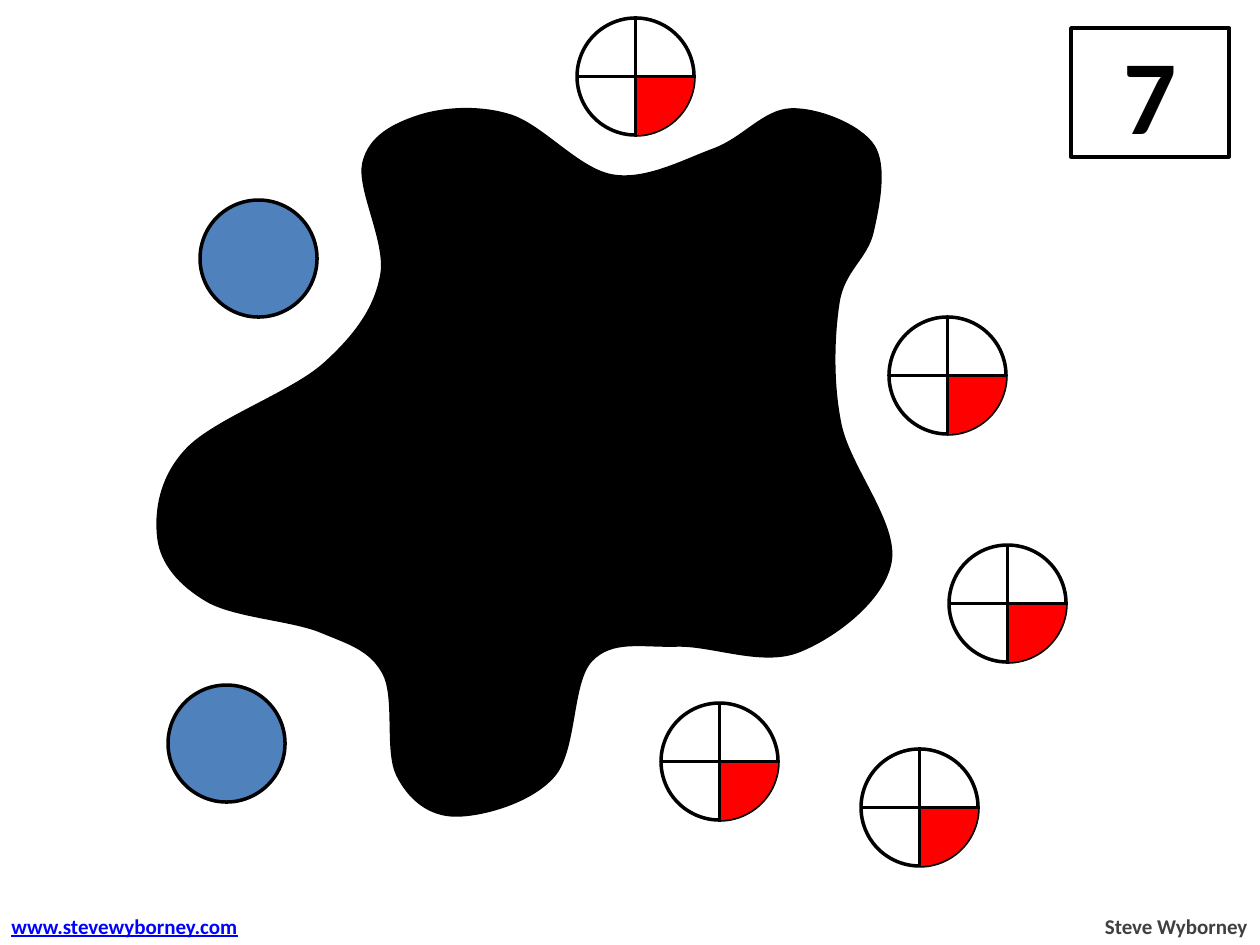
from lxml.etree import SubElement
from pptx import Presentation
from pptx.dml.color import RGBColor
from pptx.enum.shapes import MSO_CONNECTOR, MSO_SHAPE
from pptx.enum.text import MSO_ANCHOR, PP_ALIGN
from pptx.oxml.ns import qn
from pptx.util import Pt

COLORS = {"ink": "000000", "paper": "FFFFFF", "whole": "4F81BD",
          "quarter": "FF0000", "author": "404040", "link": "0000FF"}
TOTAL = ("7", (1071, 28, 158, 129))
AUTHOR = ("Steve Wyborney", (1091, 907, 169, 38))
WEBSITE = ("www.stevewyborney.com", (-1, 907, 258, 38))
WHOLES = [(200, 200), (168, 685)]
QUARTERS = [(577, 18), (949, 545), (861, 749), (889, 317), (661, 703)]
SPLAT_KNOTS = [
    (207, 600), (159, 538), (188, 449), (325, 364), (382, 275), (364, 163),
    (418, 117), (510, 116), (612, 176), (714, 150), (791, 110), (873, 146),
    (872, 232), (838, 302), (840, 425), (890, 562), (798, 651), (677, 645),
    (591, 660), (553, 776), (456, 815), (398, 775), (384, 673), (321, 631),
]

PX = 914400 / 126
SLIDE_SIZE = (1260, 945)
DIAMETER = 117
QUARTER_TURN = (0, 54.36)
LINE_WIDTH = Pt(2)
POINTS_PER_CURVE = 3


def emu(*lengths):
    return [round(length * PX) for length in lengths]


def color(name):
    return RGBColor.from_string(COLORS[name])


def outline(line):
    line.color.rgb = color("ink")
    line.width = LINE_WIDTH


def paint(shape, fill, outlined=True):
    shape.shadow.inherit = False
    shape.fill.solid()
    shape.fill.fore_color.rgb = color(fill)
    if outlined:
        outline(shape.line)
    else:
        shape.line.fill.background()
    return shape


def write(box, text, *, size=12, ink="ink", align=PP_ALIGN.LEFT,
          anchor=MSO_ANCHOR.TOP, underline=False):
    frame = box.text_frame
    frame.word_wrap = False
    frame.vertical_anchor = anchor
    paragraph = frame.paragraphs[0]
    paragraph.alignment = align
    run = paragraph.add_run()
    run.text = text
    font = run.font
    font.name, font.size, font.bold = "Calibri", Pt(size), True
    font.underline = underline
    font.color.rgb = color(ink)


def add_round(shapes, preset, corner, fill, outlined=True):
    box = emu(*corner, DIAMETER, DIAMETER)
    return paint(shapes.add_shape(preset, *box), fill, outlined)


def add_divider(shapes, *ends):
    divider = shapes.add_connector(MSO_CONNECTOR.STRAIGHT, *emu(*ends))
    outline(divider.line)
    SubElement(divider._element.spPr, qn("a:effectLst"))


def add_quarter(shapes, corner):
    wheel = shapes.add_group_shape().shapes
    add_round(wheel, MSO_SHAPE.OVAL, corner, "paper")
    wedge = add_round(wheel, MSO_SHAPE.PIE, corner, "quarter", outlined=False)
    for index, angle in enumerate(QUARTER_TURN):
        wedge.adjustments[index] = angle
    left, top = corner
    right, bottom = left + DIAMETER, top + DIAMETER
    center_x, center_y = (left + right) / 2, (top + bottom) / 2
    add_divider(wheel, center_x, top, center_x, bottom)
    add_divider(wheel, left, center_y, right, center_y)


def smooth_loop(knots):
    count = len(knots)
    tangents = [
        tuple((after - before) / 6 for before, after
              in zip(knots[index - 1], knots[(index + 1) % count]))
        for index in range(count)
    ]
    points = []
    for index, (x, y) in enumerate(knots):
        following = (index + 1) % count
        end_x, end_y = knots[following]
        leave_x, leave_y = tangents[index]
        arrive_x, arrive_y = tangents[following]
        points += [(x + leave_x, y + leave_y),
                   (end_x - arrive_x, end_y - arrive_y),
                   (end_x, end_y)]
    return points


def bend_segments(shape):
    segments = list(shape._element.iter(qn("a:lnTo")))
    for first in range(0, len(segments), POINTS_PER_CURVE):
        trio = segments[first:first + POINTS_PER_CURVE]
        curve = trio[0].makeelement(qn("a:cubicBezTo"))
        trio[0].addprevious(curve)
        for segment in trio:
            curve.extend(list(segment))
            segment.getparent().remove(segment)


def add_splat(shapes):
    builder = shapes.build_freeform(*SPLAT_KNOTS[0], scale=PX)
    builder.add_line_segments(smooth_loop(SPLAT_KNOTS))
    splat = paint(builder.convert_to_shape(), "ink")
    bend_segments(splat)


def main():
    deck = Presentation()
    deck.slide_width, deck.slide_height = emu(*SLIDE_SIZE)
    shapes = deck.slides.add_slide(deck.slide_layouts[6]).shapes

    total, total_box = TOTAL
    card = paint(shapes.add_shape(MSO_SHAPE.RECTANGLE, *emu(*total_box)), "paper")
    write(card, total, size=60, align=PP_ALIGN.CENTER, anchor=MSO_ANCHOR.MIDDLE)
    author, author_box = AUTHOR
    write(shapes.add_textbox(*emu(*author_box)), author, ink="author",
          align=PP_ALIGN.RIGHT)
    website, website_box = WEBSITE
    write(shapes.add_textbox(*emu(*website_box)), website, ink="link",
          underline=True)

    for corner in WHOLES:
        add_round(shapes, MSO_SHAPE.OVAL, corner, "whole")
    for corner in QUARTERS:
        add_quarter(shapes, corner)
    add_splat(shapes)
    deck.save("out.pptx")


if __name__ == "__main__":
    main()
